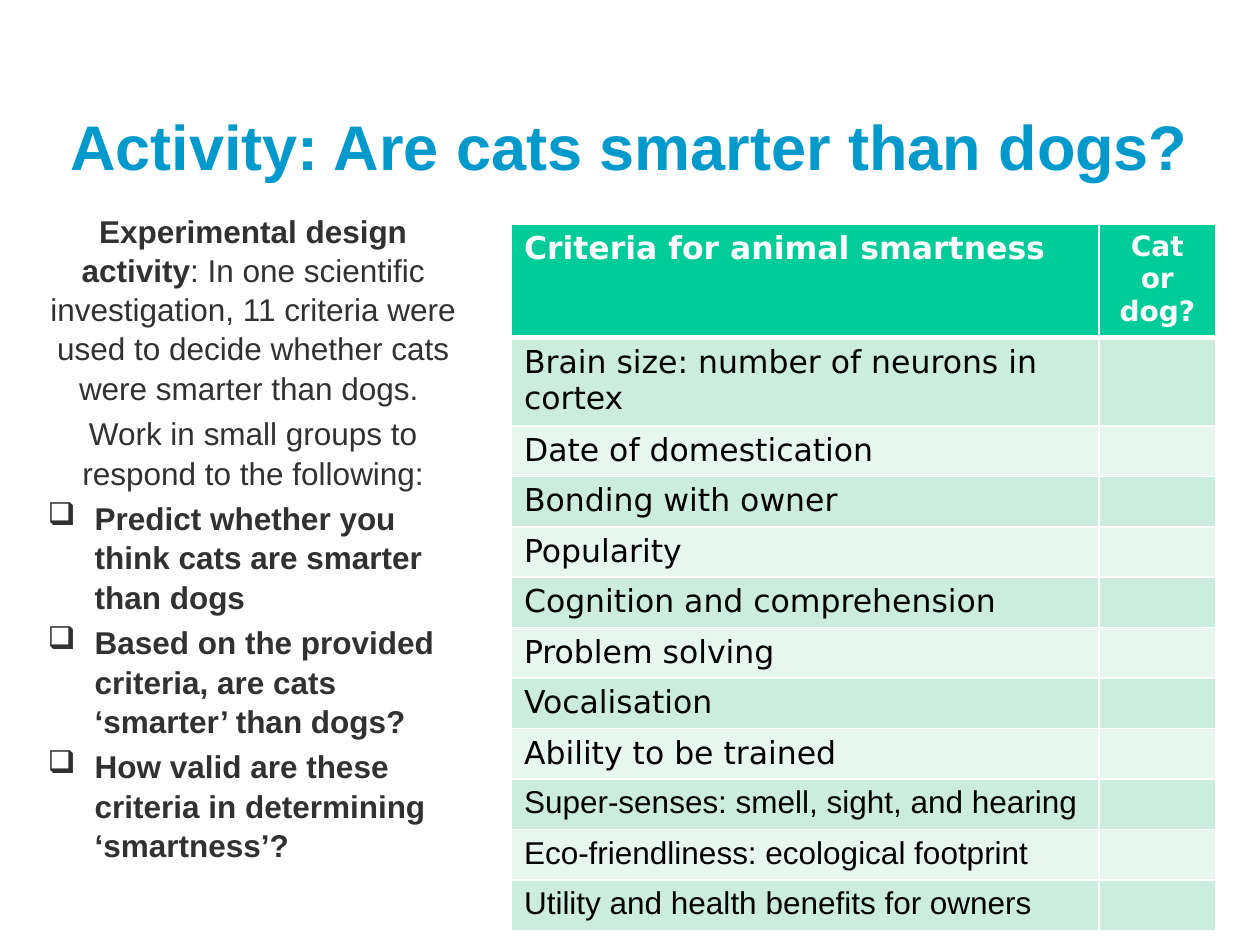
"""Build the cats and dogs activity slide with its criteria table."""
import pptx
import pptx.dml.color
import pptx.enum.text
import pptx.oxml
import pptx.oxml.ns
import pptx.util
from dataclasses import dataclass

Cm = pptx.util.Cm
Pt = pptx.util.Pt
PP_ALIGN = pptx.enum.text.PP_ALIGN
ANCHOR = pptx.enum.text.MSO_ANCHOR

HEADING = "Activity: Are cats smarter than dogs?"
INTRODUCTION = [
    [
        ("Experimental design activity", True),
        (": In one scientific investigation, 11 criteria were used to decide "
         "whether cats were smarter than dogs. ", False),
    ],
    [("Work in small groups to respond to the following:", False)],
]
TASKS = [
    "Predict whether you think cats are smarter than dogs",
    "Based on the provided criteria, are cats ‘smarter’ than dogs?",
    "How valid are these criteria in determining ‘smartness’?",
]
CRITERIA_HEADING = "Criteria for animal smartness"
ANSWER_HEADING = "Cat or dog?"
CRITERIA = [
    "Brain size: number of neurons in cortex",
    "Date of domestication",
    "Bonding with owner",
    "Popularity",
    "Cognition and comprehension",
    "Problem solving",
    "Vocalisation",
    "Ability to be trained",
]
LATER_CRITERIA = [
    "Super-senses: smell, sight, and hearing",
    "Eco-friendliness: ecological footprint",
    "Utility and health benefits for owners",
]


@dataclass(frozen=True)
class Theme:
    sans: str = "Arial"
    table_font: str = "DejaVu Sans"
    heading: str = "0099CC"
    body: str = "303132"
    white: str = "FFFFFF"
    black: str = "000000"
    header_fill: str = "00CC99"
    bands: tuple = ("CCECDE", "E7F6EF")
    heading_size: int = 36
    body_size: int = 18
    answer_size: int = 16
    thin: int = 1
    thick: int = 3


THEME = Theme()


def write(paragraph, text, font=THEME.sans, size=THEME.body_size,
          color=THEME.body, bold=False, align=PP_ALIGN.LEFT):
    paragraph.alignment = align
    run = paragraph.add_run()
    run.text = text
    run.font.name = font
    run.font.size = Pt(size)
    run.font.bold = bold
    run.font.color.rgb = pptx.dml.color.RGBColor.from_string(color)


def add_frame(slide, left, top, width, height, anchor=ANCHOR.TOP):
    frame = slide.shapes.add_textbox(Cm(left), Cm(top), Cm(width), Cm(height)).text_frame
    frame.word_wrap = True
    frame.vertical_anchor = anchor
    return frame


def add_bullet(paragraph, indent):
    properties = paragraph._p.get_or_add_pPr()
    properties.set("marL", str(indent))
    properties.set("indent", str(-indent))
    properties.append(pptx.oxml.parse_xml(
        f'<a:buChar {pptx.oxml.ns.nsdecls("a")} char="❑"/>'))


def style_cell(cell, fill, top, bottom):
    properties = cell._tc.get_or_add_tcPr()
    edges = {"L": THEME.thin, "R": THEME.thin, "T": top, "B": bottom}
    for edge, weight in edges.items():
        properties.append(pptx.oxml.parse_xml(
            f'<a:ln{edge} {pptx.oxml.ns.nsdecls("a")} w="{Pt(weight)}">'
            f'<a:solidFill><a:srgbClr val="{THEME.white}"/></a:solidFill></a:ln{edge}>'))
    cell.fill.solid()
    cell.fill.fore_color.rgb = pptx.dml.color.RGBColor.from_string(fill)


def add_instructions(slide):
    frame = add_frame(slide, 0.71, 4.11, 8.79, 13)
    for index in range(len(INTRODUCTION) + len(TASKS)):
        paragraph = frame.add_paragraph() if index else frame.paragraphs[0]
        paragraph.line_spacing = 1.04
        if index:
            paragraph.space_before = Pt(THEME.body_size * 0.2)
        if index < len(INTRODUCTION):
            for text, bold in INTRODUCTION[index]:
                write(paragraph, text, bold=bold, align=PP_ALIGN.CENTER)
        else:
            add_bullet(paragraph, Cm(0.95))
            write(paragraph, TASKS[index - len(INTRODUCTION)], bold=True)


def add_criteria(slide):
    criteria = CRITERIA + LATER_CRITERIA
    widths = (11.84, 2.36)
    row_height = 1.01
    row_count = len(criteria) + 1
    grid = slide.shapes.add_table(row_count, len(widths), Cm(10.31), Cm(4.52),
                                  Cm(sum(widths)), Cm(row_height * row_count)).table
    for column, width in zip(grid.columns, widths):
        column.width = Cm(width)
    for index, row in enumerate(grid.rows):
        row.height = Cm(row_height)
        fill = THEME.bands[(index - 1) % 2] if index else THEME.header_fill
        for cell in row.cells:
            style_cell(cell, fill,
                       top=THEME.thick if index == 1 else THEME.thin,
                       bottom=THEME.thin if index else THEME.thick)

    header = {"font": THEME.table_font, "color": THEME.white, "bold": True}
    write(grid.cell(0, 0).text_frame.paragraphs[0], CRITERIA_HEADING, **header)
    write(grid.cell(0, 1).text_frame.paragraphs[0], ANSWER_HEADING,
          size=THEME.answer_size, align=PP_ALIGN.CENTER, **header)
    for index, criterion in enumerate(criteria, start=1):
        font = THEME.sans if criterion in LATER_CRITERIA else THEME.table_font
        write(grid.cell(index, 0).text_frame.paragraphs[0], criterion,
              font=font, color=THEME.black)


def main():
    deck = pptx.Presentation()
    deck.slide_width, deck.slide_height = Cm(25.4), Cm(19.05)
    slide = deck.slides.add_slide(deck.slide_layouts[6])
    heading = add_frame(slide, 1.09, 1.7, 23.19, 2.44, ANCHOR.MIDDLE)
    write(heading.paragraphs[0], HEADING, size=THEME.heading_size,
          color=THEME.heading, bold=True, align=PP_ALIGN.CENTER)
    add_instructions(slide)
    add_criteria(slide)
    deck.save("out.pptx")


if __name__ == "__main__":
    main()
